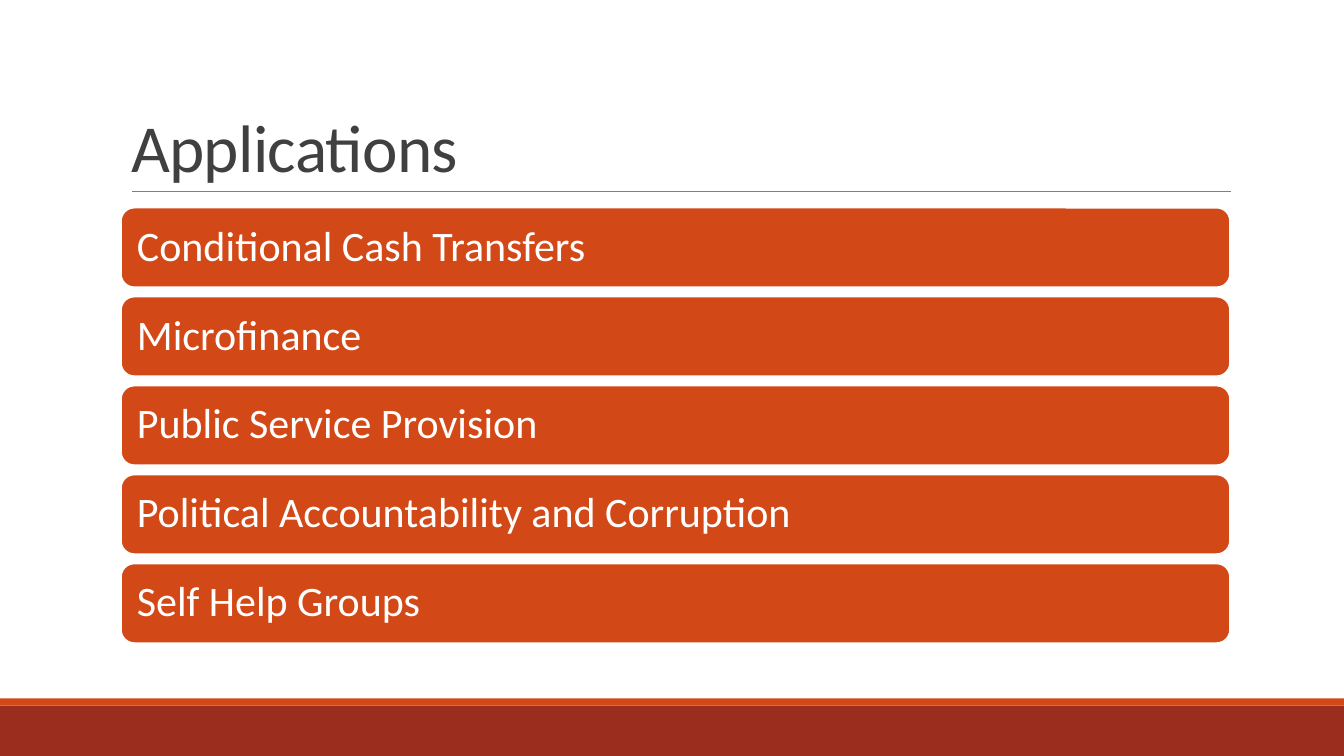
from pptx import Presentation
from pptx.dml.color import RGBColor
from pptx.enum.shapes import MSO_CONNECTOR, MSO_SHAPE
from pptx.enum.text import MSO_ANCHOR, MSO_AUTO_SIZE, PP_ALIGN
from pptx.oxml.ns import qn
from pptx.util import Inches, Pt
from lxml import etree

RECTANGLE = MSO_SHAPE.RECTANGLE
ROUNDED = MSO_SHAPE.ROUNDED_RECTANGLE
STRAIGHT = MSO_CONNECTOR.STRAIGHT
LEFT = PP_ALIGN.LEFT
MIDDLE, BOTTOM = MSO_ANCHOR.MIDDLE, MSO_ANCHOR.BOTTOM
NO_AUTOFIT = MSO_AUTO_SIZE.NONE

COLORS = {
    "accent": "D34817",
    "footer": "9B2D1F",
    "rule": "808080",
    "title": "404040",
    "white": "FFFFFF",
}
SLIDE_WIDTH, SLIDE_HEIGHT = 13.33, 7.5
APPLICATIONS = [
    "Conditional Cash Transfers",
    "Microfinance",
    "Public Service Provision",
    "Political Accountability and Corruption",
    "Self Help Groups",
]


def color(name):
    """Return the named palette colour."""
    return RGBColor.from_string(COLORS[name])


def style_text(frame, size, color_name, spacing, anchor):
    """Format the single left-aligned paragraph of a text frame."""
    frame.word_wrap = True
    frame.auto_size = NO_AUTOFIT
    frame.vertical_anchor = anchor
    paragraph = frame.paragraphs[0]
    paragraph.alignment = LEFT
    paragraph.line_spacing = spacing
    font = paragraph.runs[0].font
    font.name = "Calibri"
    font.size = Pt(size)
    font.color.rgb = color(color_name)


def add_block(slide, kind, left, top, width, height, fill):
    """Add a filled shape without outline or shadow."""
    block = slide.shapes.add_shape(
        kind, Inches(left), Inches(top), Inches(width), Inches(height))
    block.shadow.inherit = False
    block.fill.solid()
    block.fill.fore_color.rgb = color(fill)
    block.line.fill.background()
    return block


def add_footer(slide, left, top, width, height):
    """Draw the footer band below its thin accent stripe."""
    stripe = 0.07
    add_block(slide, RECTANGLE, left, top + stripe, width, height - stripe, "footer")
    add_block(slide, RECTANGLE, left, top, width, stripe, "accent")


def add_heading(slide, left, top, width, height):
    """Place the title with a rule along the bottom of its box."""
    heading = slide.shapes.title
    heading.left, heading.top = Inches(left), Inches(top)
    heading.width, heading.height = Inches(width), Inches(height)
    heading.text_frame.text = "Applications"
    style_text(heading.text_frame, 48, "title", 0.85, BOTTOM)
    run = heading.text_frame.paragraphs[0].runs[0]
    run.font._element.set("spc", "-50")

    bottom = Inches(top + height)
    rule = slide.shapes.add_connector(
        STRAIGHT, Inches(left + 0.11), bottom, Inches(left + width + 0.01), bottom)
    rule.line.color.rgb = color("rule")
    rule.line.width = Pt(0.5)
    etree.SubElement(rule._element.spPr, qn("a:effectLst"))


def add_applications(slide, left, top, width, height):
    """Stack one rounded bar per application, evenly spaced."""
    bar_height = 0.79
    step = (height - bar_height) / (len(APPLICATIONS) - 1)
    for index, application in enumerate(APPLICATIONS):
        bar = add_block(slide, ROUNDED, left, top + index * step,
                        width, bar_height, "accent")
        bar.line.color.rgb = color("white")
        bar.line.width = Pt(1.25)
        frame = bar.text_frame
        frame.text = application
        frame.margin_left = frame.margin_right = Inches(0.12)
        frame.margin_top = frame.margin_bottom = Inches(0.12)
        style_text(frame, 30, "white", 0.9, MIDDLE)


def main():
    """Build and save the applications slide."""
    deck = Presentation()
    deck.slide_width, deck.slide_height = Inches(SLIDE_WIDTH), Inches(SLIDE_HEIGHT)
    slide = deck.slides.add_slide(deck.slide_layouts[5])
    add_footer(slide, 0, 6.93, SLIDE_WIDTH, 0.57)
    add_heading(slide, 1.2, 0.31, 11, 1.59)
    add_applications(slide, 1.2, 2.06, 11, 4.32)
    deck.save("out.pptx")


if __name__ == "__main__":
    main()
